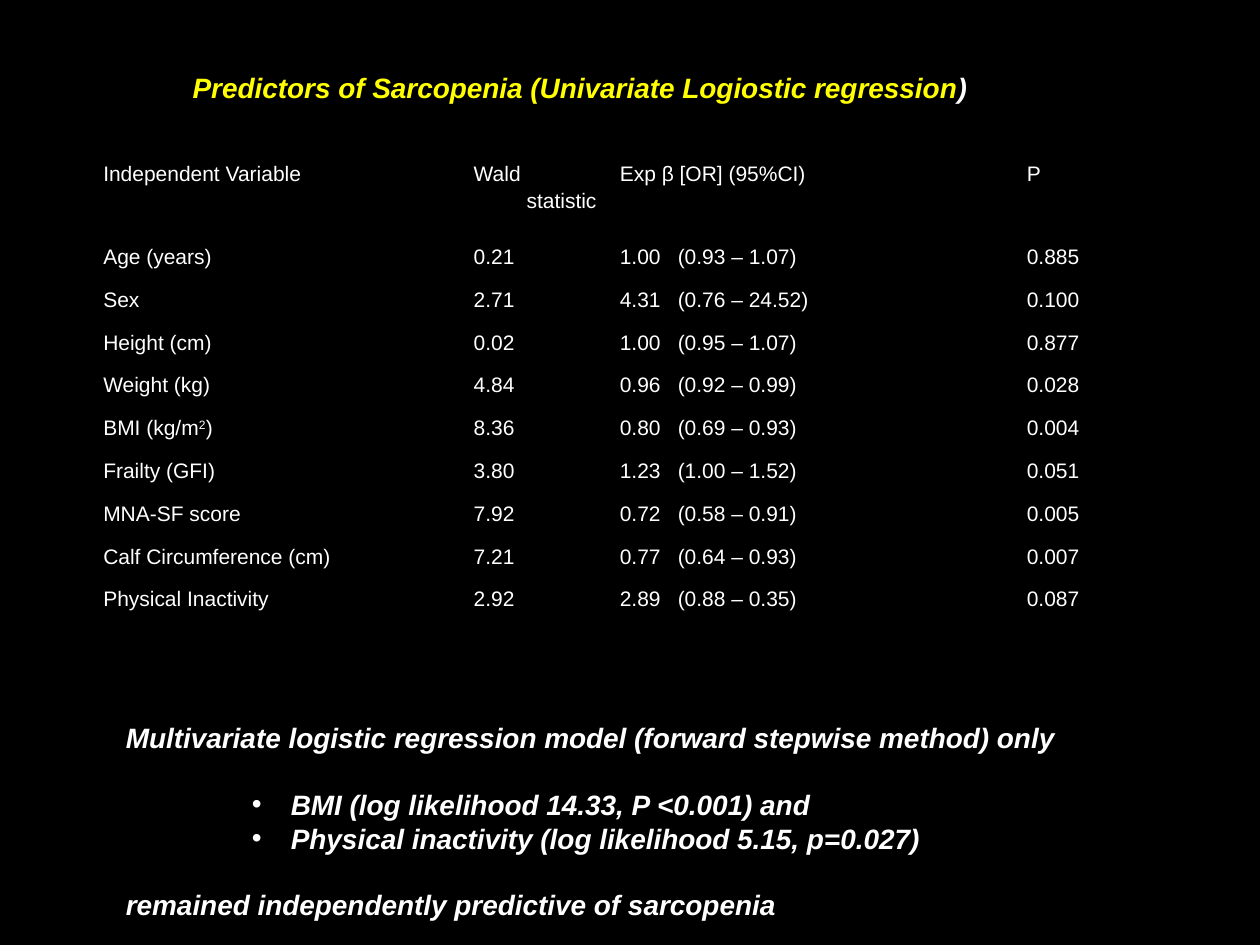
from lxml.etree import SubElement
from pptx import Presentation
from pptx.dml.color import RGBColor
from pptx.oxml.ns import qn
from pptx.util import Inches, Pt

WHITE, YELLOW, BLACK = "FFFFFF", "FFFF00", "000000"

TITLE = [("Predictors of Sarcopenia (Univariate Logiostic regression", YELLOW), (")", WHITE)]
HEADER = ("Independent Variable", "Wald", "Exp β [OR] (95%CI)", "P")
PREDICTORS = [
    ("Age (years)", "0.21", "1.00", "(0.93 – 1.07)", "0.885"),
    ("Sex", "2.71", "4.31", "(0.76 – 24.52)", "0.100"),
    ("Height (cm)", "0.02", "1.00", "(0.95 – 1.07)", "0.877"),
    ("Weight (kg)", "4.84", "0.96", "(0.92 – 0.99)", "0.028"),
    ("BMI (kg/m^2^)", "8.36", "0.80", "(0.69 – 0.93)", "0.004"),
    ("Frailty (GFI)", "3.80", "1.23", "(1.00 – 1.52)", "0.051"),
    ("MNA-SF score", "7.92", "0.72", "(0.58 – 0.91)", "0.005"),
    ("Calf Circumference (cm)", "7.21", "0.77", "(0.64 – 0.93)", "0.007"),
    ("Physical Inactivity", "2.92", "2.89", "(0.88 – 0.35)", "0.087"),
]
CONCLUSION = [
    ("Multivariate logistic regression model (forward stepwise method) only", False, 0),
    ("BMI (log likelihood 14.33, P <0.001) and", True, 19),
    ("Physical inactivity (log likelihood 5.15, p=0.027)", True, 0),
    ("remained independently predictive of sarcopenia", False, 19),
]
COLUMN_WIDTHS = (2.94, 1.16, 3.23, 1.58)
HEADER_HEIGHT, ROW_HEIGHT = 0.66, 0.34


def color(value):
    return RGBColor.from_string(value)


def add_text(paragraph, text, size=12, fill=WHITE, strong=False, superscript=False):
    run = paragraph.add_run()
    run.text = text
    font = run.font
    font.name, font.size = "Arial", Pt(size)
    font.bold = font.italic = strong
    font.color.rgb = color(fill)
    if superscript:
        font._element.set("baseline", "30000")


def set_indent(paragraph, left, first=0):
    properties = paragraph._p.get_or_add_pPr()
    properties.set("marL", str(Inches(left)))
    properties.set("indent", str(Inches(first)))
    return properties


def add_text_box(slide, left, top, width, height):
    frame = slide.shapes.add_textbox(*map(Inches, (left, top, width, height))).text_frame
    frame.word_wrap = True
    return frame


def format_cell(cell):
    cell.margin_left = cell.margin_right = Inches(0.07)
    cell.margin_top = cell.margin_bottom = 0
    properties = cell._tc.get_or_add_tcPr()
    for side in ("lnL", "lnR", "lnT", "lnB"):
        line = SubElement(properties, qn(f"a:{side}"), w=str(Pt(1)))
        SubElement(SubElement(line, qn("a:solidFill")), qn("a:srgbClr"), val=BLACK)
    cell.fill.background()


def fill_cell(cell, text):
    format_cell(cell)
    paragraph = cell.text_frame.paragraphs[0]
    paragraph.line_spacing = 1.15
    for index, part in enumerate(text.split("^")):
        add_text(paragraph, part, superscript=index == 1)
    return paragraph


def add_predictor_table(slide):
    height = HEADER_HEIGHT + ROW_HEIGHT * len(PREDICTORS)
    table = slide.shapes.add_table(
        len(PREDICTORS) + 1, len(COLUMN_WIDTHS),
        Inches(0.75), Inches(1.26), Inches(sum(COLUMN_WIDTHS)), Inches(height)).table
    table.first_row = table.horz_banding = False
    for column, width in zip(table.columns, COLUMN_WIDTHS):
        column.width = Inches(width)
    for index, row in enumerate(table.rows):
        row.height = Inches(ROW_HEIGHT if index else HEADER_HEIGHT)

    for column, text in enumerate(HEADER):
        fill_cell(table.cell(0, column), text)
    second_line = table.cell(0, 1).text_frame.add_paragraph()
    second_line.line_spacing = 1.15
    set_indent(second_line, 0.42)
    add_text(second_line, "statistic")

    for row, (variable, wald, ratio, interval, probability) in enumerate(PREDICTORS, 1):
        for column, text in enumerate((variable, wald, f"{ratio}\t{interval}", probability)):
            paragraph = fill_cell(table.cell(row, column), text)
            if "\t" in text:
                tabs = SubElement(paragraph._p.get_or_add_pPr(), qn("a:tabLst"))
                SubElement(tabs, qn("a:tab"), pos=str(Inches(0.46)), algn="l")


def add_conclusion(slide):
    frame = add_text_box(slide, 0.9, 5.67, 8.61, 1.72)
    for index, (text, bulleted, space) in enumerate(CONCLUSION):
        paragraph = frame.add_paragraph() if index else frame.paragraphs[0]
        paragraph.space_before = Pt(space)
        if bulleted:
            paragraph.level = 2
            properties = set_indent(paragraph, 1.31, -0.31)
            SubElement(properties, qn("a:buFont"), typeface="Arial")
            SubElement(properties, qn("a:buChar"), char="•")
        add_text(paragraph, text, size=16, strong=True)


def main():
    presentation = Presentation()
    presentation.slide_width, presentation.slide_height = Inches(10), Inches(7.5)
    slide = presentation.slides.add_slide(presentation.slide_layouts[6])
    background = slide.background.fill
    background.solid()
    background.fore_color.rgb = color(BLACK)

    add_predictor_table(slide)
    title = add_text_box(slide, 1.43, 0.51, 7.81, 0.37).paragraphs[0]
    for text, fill in TITLE:
        add_text(title, text, size=16, fill=fill, strong=True)
    add_conclusion(slide)
    presentation.save("out.pptx")


if __name__ == "__main__":
    main()
